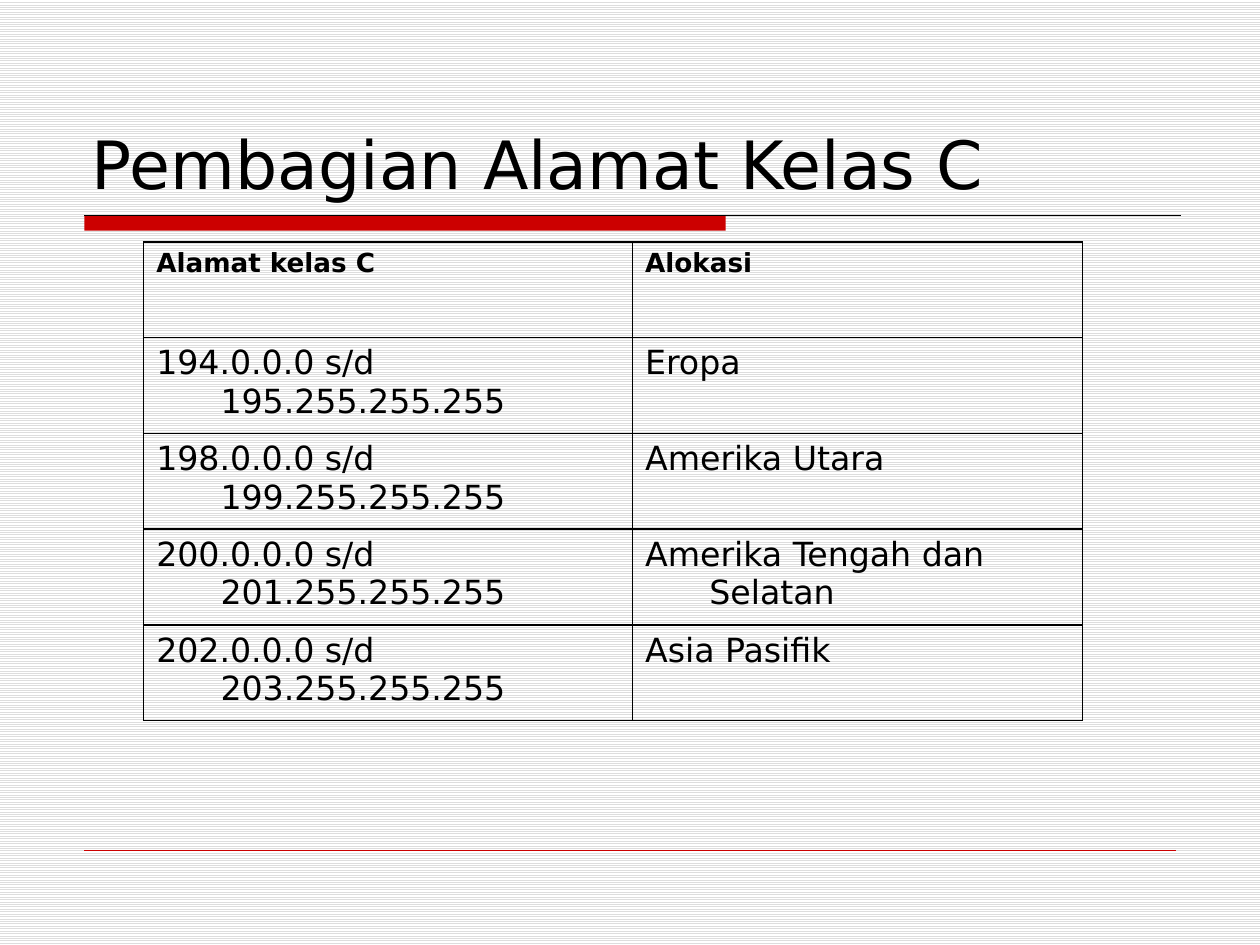
from typing import Any, NamedTuple

from lxml.etree import SubElement
from pptx import Presentation
from pptx.dml.color import RGBColor as RGB
from pptx.enum.dml import MSO_PATTERN as PATTERN
from pptx.enum.shapes import MSO_CONNECTOR as CONNECTOR, MSO_SHAPE as SHAPE
from pptx.enum.text import MSO_ANCHOR as ANCHOR, MSO_AUTO_SIZE as AUTOSIZE, PP_ALIGN as ALIGN
from pptx.oxml.ns import qn
from pptx.util import Inches, Pt

COLORS = {"ink": "000000", "accent": "CC0000", "stripe": "DDDDDD", "paper": "FFFFFF"}
FONT = "DejaVu Sans"
WIDTH, HEIGHT = Inches(10), Inches(7.5)
LEFT, BAR_TOP = 0.067, 0.228
COL_WIDTHS = (3.88, 3.57)
ROW_HEIGHT = 0.76
INDENT = 0.51
HEADER = {"size": Pt(15), "bold": True}
BODY = {"size": Pt(19), "bold": False}


class Rule(NamedTuple):
    """A horizontal line, placed in shares of the slide."""
    x1: float
    x2: float
    y: float
    color: str
    weight: float


class Allocation(NamedTuple):
    """One table row: an address range and its region."""
    address: str
    region: str


RULES = (
    Rule(LEFT, 0.937, BAR_TOP, "ink", 0.75),
    Rule(LEFT, 0.933, 0.9, "accent", 0.25),
)
ROWS = (
    Allocation("Alamat kelas C", "Alokasi"),
    Allocation("194.0.0.0 s/d 195.255.255.255", "Eropa"),
    Allocation("198.0.0.0 s/d 199.255.255.255", "Amerika Utara"),
    Allocation("200.0.0.0 s/d 201.255.255.255", "Amerika Tengah dan Selatan"),
    Allocation("202.0.0.0 s/d 203.255.255.255", "Asia Pasifik"),
)


def rgb(name: str) -> RGB:
    """Look up a named colour."""
    return RGB.from_string(COLORS[name])


def set_all(obj: Any, values: dict[str, Any]) -> None:
    """Set several attributes of one object."""
    for name, value in values.items():
        setattr(obj, name, value)


def write(tf: Any, text: str, style: dict[str, Any]) -> Any:
    """Fill a text frame with one styled run and return its paragraph."""
    p = tf.paragraphs[0]
    p.alignment = ALIGN.LEFT
    r = p.add_run()
    r.text = text
    set_all(r.font, {"name": FONT, **style})
    r.font.color.rgb = rgb("ink")
    return p


def paint_background(s: Any) -> None:
    """Cover the slide with light horizontal stripes."""
    fill = s.background.fill
    fill.patterned()
    fill.pattern = PATTERN.LIGHT_HORIZONTAL
    fill.fore_color.rgb, fill.back_color.rgb = rgb("stripe"), rgb("paper")


def add_bar(s: Any) -> None:
    """Draw the thick bar under the title."""
    sp = s.shapes.add_shape(SHAPE.RECTANGLE, int(LEFT * WIDTH), int(BAR_TOP * HEIGHT),
                            Inches(5.09), Inches(0.12))
    sp.shadow.inherit = False
    sp.fill.solid()
    sp.fill.fore_color.rgb = rgb("accent")
    sp.line.fill.background()


def add_rule(s: Any, rule: Rule) -> None:
    """Draw a thin line without a shadow."""
    y = int(rule.y * HEIGHT)
    sp = s.shapes.add_connector(CONNECTOR.STRAIGHT, int(rule.x1 * WIDTH), y,
                                int(rule.x2 * WIDTH), y)
    sp.line.color.rgb, sp.line.width = rgb(rule.color), Pt(rule.weight)
    SubElement(sp._element.spPr, qn("a:effectLst"))


def add_title(s: Any, text: str) -> None:
    """Place and format the title placeholder."""
    sp = s.shapes.title
    set_all(sp, {"left": Inches(0.63), "top": Inches(0.33),
                 "width": Inches(8.75), "height": Inches(1.33)})
    tf = sp.text_frame
    set_all(tf, {"word_wrap": True, "auto_size": AUTOSIZE.NONE,
                 "vertical_anchor": ANCHOR.BOTTOM})
    write(tf, text, {"size": Pt(38)})


def add_borders(cell: Any) -> None:
    """Draw a thin line on every side of a cell."""
    tc_pr = cell._tc.get_or_add_tcPr()
    for side in "LRTB":
        ln = SubElement(tc_pr, qn(f"a:ln{side}"), w=str(Pt(1)))
        fill = SubElement(ln, qn("a:solidFill"))
        SubElement(fill, qn("a:srgbClr"), val=COLORS["ink"])


def format_cell(cell: Any, text: str, style: dict[str, Any]) -> None:
    """Write a cell with a hanging indent, borders and no fill."""
    p = write(cell.text_frame, text, style)
    p_pr = p._p.get_or_add_pPr()
    p_pr.set("marL", str(Inches(INDENT)))
    p_pr.set("indent", str(-Inches(INDENT)))
    add_borders(cell)
    cell.fill.background()


def add_allocations(s: Any, rows: tuple[Allocation, ...]) -> None:
    """Build the table of address ranges."""
    table = s.shapes.add_table(len(rows), len(COL_WIDTHS), Inches(1.14), Inches(1.92),
                               Inches(sum(COL_WIDTHS)), Inches(ROW_HEIGHT * len(rows))).table
    set_all(table, {"first_row": False, "horz_banding": False})
    for col, width in zip(table.columns, COL_WIDTHS):
        col.width = Inches(width)
    for i, row in enumerate(rows):
        table.rows[i].height = Inches(ROW_HEIGHT)
        for j, text in enumerate(row):
            format_cell(table.cell(i, j), text, BODY if i else HEADER)


def main() -> None:
    """Build the slide and save it."""
    prs = Presentation()
    prs.slide_width, prs.slide_height = WIDTH, HEIGHT
    s = prs.slides.add_slide(prs.slide_layouts[5])
    paint_background(s)
    add_bar(s)
    for rule in RULES:
        add_rule(s, rule)
    add_title(s, "Pembagian Alamat Kelas C")
    add_allocations(s, ROWS)
    prs.save("out.pptx")


if __name__ == "__main__":
    main()
